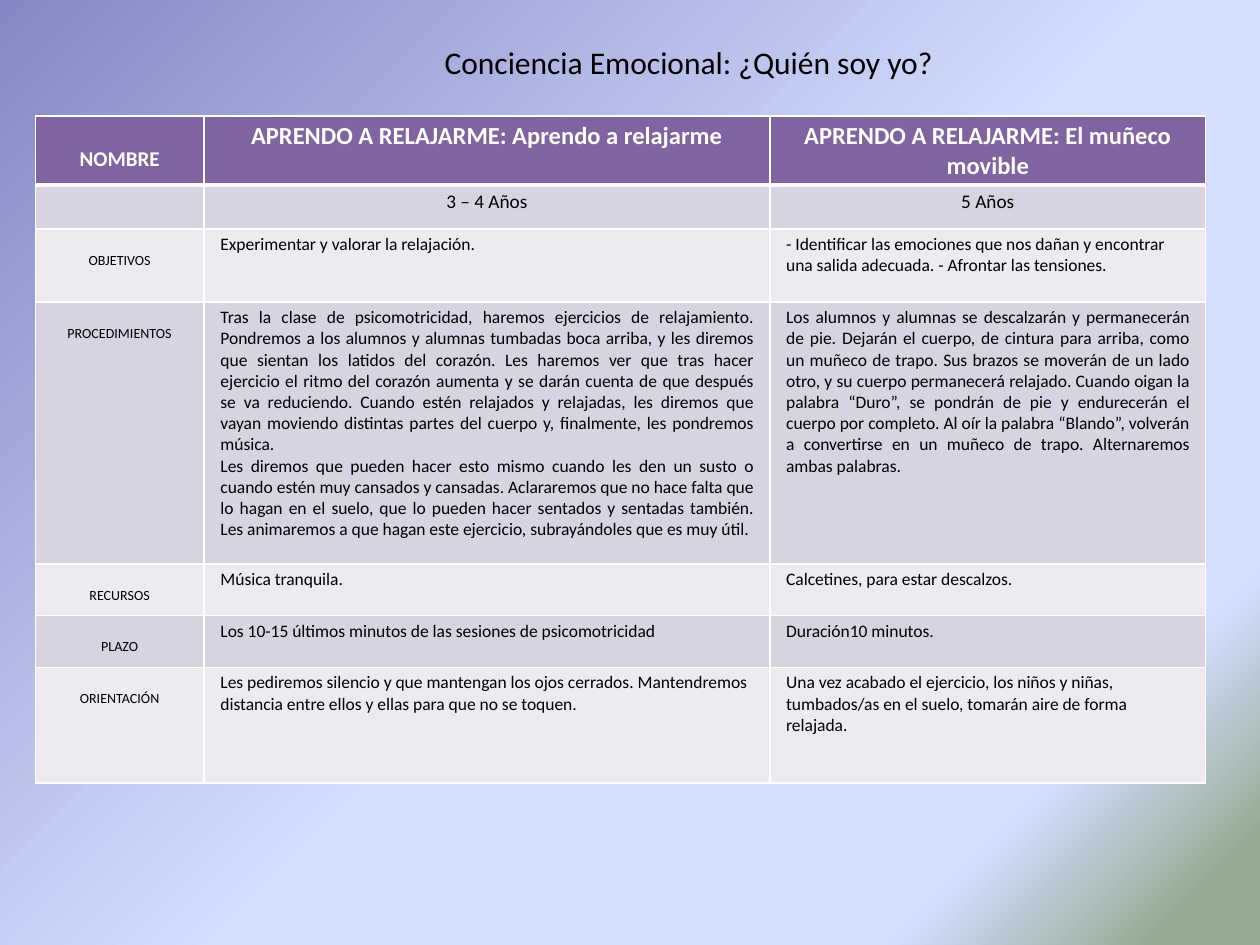
from lxml import etree
from pptx import Presentation
from pptx.dml.color import RGBColor
from pptx.enum.text import PP_ALIGN
from pptx.oxml.ns import qn
from pptx.util import Inches, Pt

LEFT, CENTER, JUSTIFY = PP_ALIGN.LEFT, PP_ALIGN.CENTER, PP_ALIGN.JUSTIFY
PURPLE, DARK_BAND, LIGHT_BAND = "8064A2", "D8D3E0", "EDEAF0"


def rgb(color):
    return RGBColor.from_string(color)


def write(tf, text, size=10, color="000000", bold=False, align=LEFT):
    for i, line in enumerate(text.split("\n")):
        p = tf.paragraphs[0] if i == 0 else tf.add_paragraph()
        p.alignment = align
        r = p.add_run()
        r.text = line
        r.font.name = "Calibri"
        r.font.size = Pt(size)
        r.font.bold = bold
        r.font.color.rgb = rgb(color)


prs = Presentation()
prs.slide_width, prs.slide_height = Inches(10), Inches(7.5)
s = prs.slides.add_slide(prs.slide_layouts[6])

# Diagonal background gradient
fill = s.background.fill
fill.gradient()
fill.gradient_angle = 315
stops = s._element.find(".//" + qn("a:gsLst"))
for stop in list(stops):
    stops.remove(stop)
for pos, color in [(0, "8488C4"), (53, "D4DEFF"), (83, "D4DEFF"), (95, "96AB94")]:
    stop = etree.SubElement(stops, qn("a:gs"), pos=str(pos * 1000))
    etree.SubElement(stop, qn("a:srgbClr"), val=color)

# Title
tf = s.shapes.add_textbox(Inches(3.43), Inches(0.29), Inches(4.09), Inches(0.4)).text_frame
tf.word_wrap = True
write(tf, "Conciencia Emocional: ¿Quién soy yo?", size=18)

# Activity table: label, first activity, second activity
rows = [
    ("NOMBRE", "APRENDO A RELAJARME: Aprendo a relajarme",
     "APRENDO A RELAJARME: El muñeco movible"),
    ("", "3 – 4 Años", "5 Años"),
    ("OBJETIVOS", "Experimentar y valorar la relajación.",
     "- Identificar las emociones que nos dañan y encontrar una salida adecuada. "
     "- Afrontar las tensiones."),
    ("PROCEDIMIENTOS",
     "Tras la clase de psicomotricidad, haremos ejercicios de relajamiento. Pondremos a los "
     "alumnos y alumnas tumbadas boca arriba, y les diremos que sientan los latidos del corazón. "
     "Les haremos ver que tras hacer ejercicio el ritmo del corazón aumenta y se darán cuenta de "
     "que después se va reduciendo. Cuando estén relajados y relajadas, les diremos que vayan "
     "moviendo distintas partes del cuerpo y, finalmente, les pondremos música.\n"
     "Les diremos que pueden hacer esto mismo cuando les den un susto o cuando estén muy cansados "
     "y cansadas. Aclararemos que no hace falta que lo hagan en el suelo, que lo pueden hacer "
     "sentados y sentadas también. Les animaremos a que hagan este ejercicio, subrayándoles que "
     "es muy útil.",
     "Los alumnos y alumnas se descalzarán y permanecerán de pie. Dejarán el cuerpo, de cintura "
     "para arriba, como un muñeco de trapo. Sus brazos se moverán de un lado otro, y su cuerpo "
     "permanecerá relajado. Cuando oigan la palabra “Duro”, se pondrán de pie y endurecerán el "
     "cuerpo por completo. Al oír la palabra “Blando”, volverán a convertirse en un muñeco de "
     "trapo. Alternaremos ambas palabras."),
    ("RECURSOS", "Música tranquila.", "Calcetines, para estar descalzos."),
    ("PLAZO", "Los 10-15 últimos minutos de las sesiones de psicomotricidad",
     "Duración10 minutos."),
    ("ORIENTACIÓN",
     "Les pediremos silencio y que mantengan los ojos cerrados. Mantendremos distancia entre "
     "ellos y ellas para que no se toquen.",
     "Una vez acabado el ejercicio, los niños y niñas, tumbados/as en el suelo, tomarán aire de "
     "forma relajada."),
]
widths = [1.34, 4.49, 3.46]
heights = [0.54, 0.35, 0.58, 2.08, 0.41, 0.41, 0.92]
table = s.shapes.add_table(len(rows), len(widths), Inches(0.28), Inches(0.92),
                           Inches(sum(widths)), Inches(sum(heights))).table
for column, width in zip(table.columns, widths):
    column.width = Inches(width)

for i, (texts, height) in enumerate(zip(rows, heights)):
    table.rows[i].height = Inches(height)
    band = PURPLE if i == 0 else DARK_BAND if i % 2 else LIGHT_BAND
    for j, text in enumerate(texts):
        cell = table.cell(i, j)
        cell.margin_left = cell.margin_right = Inches(0.13)
        cell.margin_top = cell.margin_bottom = Inches(0.04)

        # White borders, thicker under the header
        for side in ("L", "R", "T", "B"):
            thick = (i, side) in [(0, "B"), (1, "T")]
            ln = etree.SubElement(cell._tc.get_or_add_tcPr(), qn("a:ln" + side),
                                  w=str(Pt(3 if thick else 1)))
            solid = etree.SubElement(ln, qn("a:solidFill"))
            etree.SubElement(solid, qn("a:srgbClr"), val="FFFFFF")
        cell.fill.solid()
        cell.fill.fore_color.rgb = rgb(band)

        # Labels sit one line lower than the text beside them
        if j == 0:
            cell.margin_top = Inches(0.24 if i == 0 else 0.18)
        if not text:
            continue
        if i == 0:
            write(cell.text_frame, text, size=14 if j else 12, color="FFFFFF",
                  bold=True, align=CENTER)
        elif i == 1:
            write(cell.text_frame, text, size=11, align=CENTER)
        elif j == 0:
            write(cell.text_frame, text, size=8, align=CENTER)
        else:
            justified = i == 3 or (i, j) == (5, 1)
            write(cell.text_frame, text, align=JUSTIFY if justified else LEFT)

# The blank age label keeps its row low
blank = table.cell(1, 0)
blank.margin_top = Inches(0.04)
blank.text_frame.paragraphs[0].font.size = Pt(11)

prs.save("out.pptx")
